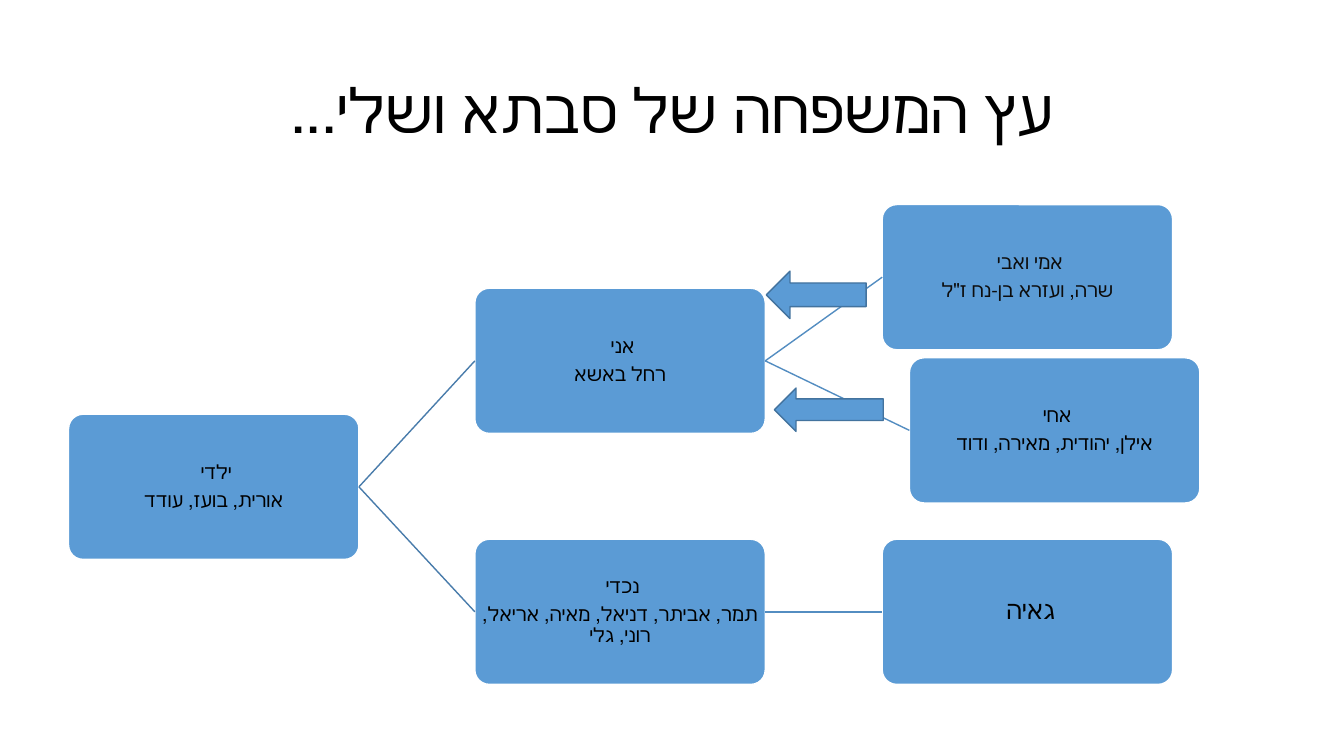
import pptx
import pptx.util
import pptx.dml.color
import pptx.enum.lang
import pptx.enum.shapes
import pptx.enum.text
import pptx.oxml.ns
import lxml.etree

Inches = pptx.util.Inches
Pt = pptx.util.Pt
RGBColor = pptx.dml.color.RGBColor
SHAPE = pptx.enum.shapes.MSO_SHAPE
HEBREW = pptx.enum.lang.MSO_LANGUAGE_ID.HEBREW

FONT = "Calibri"
BLACK = RGBColor(0x00, 0x00, 0x00)
DARK = RGBColor(0x0D, 0x0D, 0x0D)
WHITE = RGBColor(0xFF, 0xFF, 0xFF)
BLUE = RGBColor(0x5B, 0x9B, 0xD5)
EDGE = RGBColor(0x43, 0x73, 0x9E)
NEAR = RGBColor(0x49, 0x7C, 0xAB)
FAR = RGBColor(0x53, 0x8D, 0xC1)

CARD_W, CARD_H = 2.88, 1.44

# name: (left, top, size, colour, lines)
CARDS = {
    "children": (0.68, 4.11, 14, BLACK, ["ילדי ", "אורית, בועז, עודד"]),
    "me": (4.71, 2.86, 14, BLACK, ["אני ", "רחל באשא"]),
    "parents": (8.75, 2.03, 14, DARK, ["אמי ואבי ", "שרה, ועזרא בן-נח ז\"ל"]),
    "siblings": (9.02, 3.55, 14, BLACK, ["אחי ", "אילן, יהודית, מאירה, ודוד"]),
    "grandkids": (4.71, 5.35, 14, BLACK,
                  ["נכדי ", "תמר, אביתר, דניאל, מאיה, אריאל, רוני, גלי"]),
    "gaia": (8.75, 5.35, 18, BLACK, ["גאיה "]),
}
LINKS = [
    ("children", "me", NEAR),
    ("children", "grandkids", NEAR),
    ("me", "parents", FAR),
    ("me", "siblings", FAR),
    ("grandkids", "gaia", FAR),
]
ARROWS = [(7.6, 2.69, 0.99, 0.47), (7.68, 3.85, 1.08, 0.43)]


def write(frame, lines, size, color, after=0):
    """Fill the frame with centred right-to-left paragraphs."""
    frame.word_wrap = True
    frame.vertical_anchor = pptx.enum.text.MSO_ANCHOR.MIDDLE
    for i, line in enumerate(lines):
        para = frame.add_paragraph() if i else frame.paragraphs[0]
        para.alignment = pptx.enum.text.PP_ALIGN.CENTER
        para.line_spacing = 0.9
        para.space_after = Pt(after)
        para._p.get_or_add_pPr().set("rtl", "1")
        run = para.add_run()
        run.text = line
        font = run.font
        font.name = FONT
        font.size = Pt(size)
        font.color.rgb = color
        font.language_id = HEBREW


def add_title(slide, left, top, width, height):
    title = slide.shapes.title
    title.left, title.top = Inches(left), Inches(top)
    title.width, title.height = Inches(width), Inches(height)
    write(title.text_frame, ["עץ המשפחה של סבתא ושלי..."], 44, BLACK)


def add_block(slide, kind, box, edge):
    shape = slide.shapes.add_shape(kind, *map(Inches, box))
    shape.shadow.inherit = False
    shape.fill.solid()
    shape.fill.fore_color.rgb = BLUE
    shape.line.color.rgb = edge
    shape.line.width = Pt(1)
    return shape


def add_card(slide, left, top, size, color, lines):
    box = (left, top, CARD_W, CARD_H)
    card = add_block(slide, SHAPE.ROUNDED_RECTANGLE, box, WHITE)
    card.adjustments[0] = 0.1
    frame = card.text_frame
    frame.margin_left = frame.margin_right = Inches(0.01)
    frame.margin_top = frame.margin_bottom = Inches(0.01)
    write(frame, lines, size, color, after=0.35 * size)
    return card


def add_link(slide, start, end, color):
    """Join the right side of one card to the left side of the next."""
    kind = pptx.enum.shapes.MSO_CONNECTOR.STRAIGHT
    link = slide.shapes.add_connector(kind, 0, 0, 0, 0)
    link.begin_connect(start, 3)
    link.end_connect(end, 1)
    link.line.color.rgb = color
    link.line.width = Pt(1)
    lxml.etree.SubElement(link._element.spPr, pptx.oxml.ns.qn("a:effectLst"))


def add_tree(slide):
    cards = {name: add_card(slide, *card) for name, card in CARDS.items()}
    for start, end, color in LINKS:
        add_link(slide, cards[start], cards[end], color)
    for box in ARROWS:
        add_block(slide, SHAPE.LEFT_ARROW, box, EDGE)


def main():
    deck = pptx.Presentation()
    deck.slide_width, deck.slide_height = Inches(13.33), Inches(7.5)
    slide = deck.slides.add_slide(deck.slide_layouts[5])
    add_title(slide, 0.92, 0.4, 11.5, 1.45)
    add_tree(slide)
    deck.save("out.pptx")


if __name__ == "__main__":
    main()
